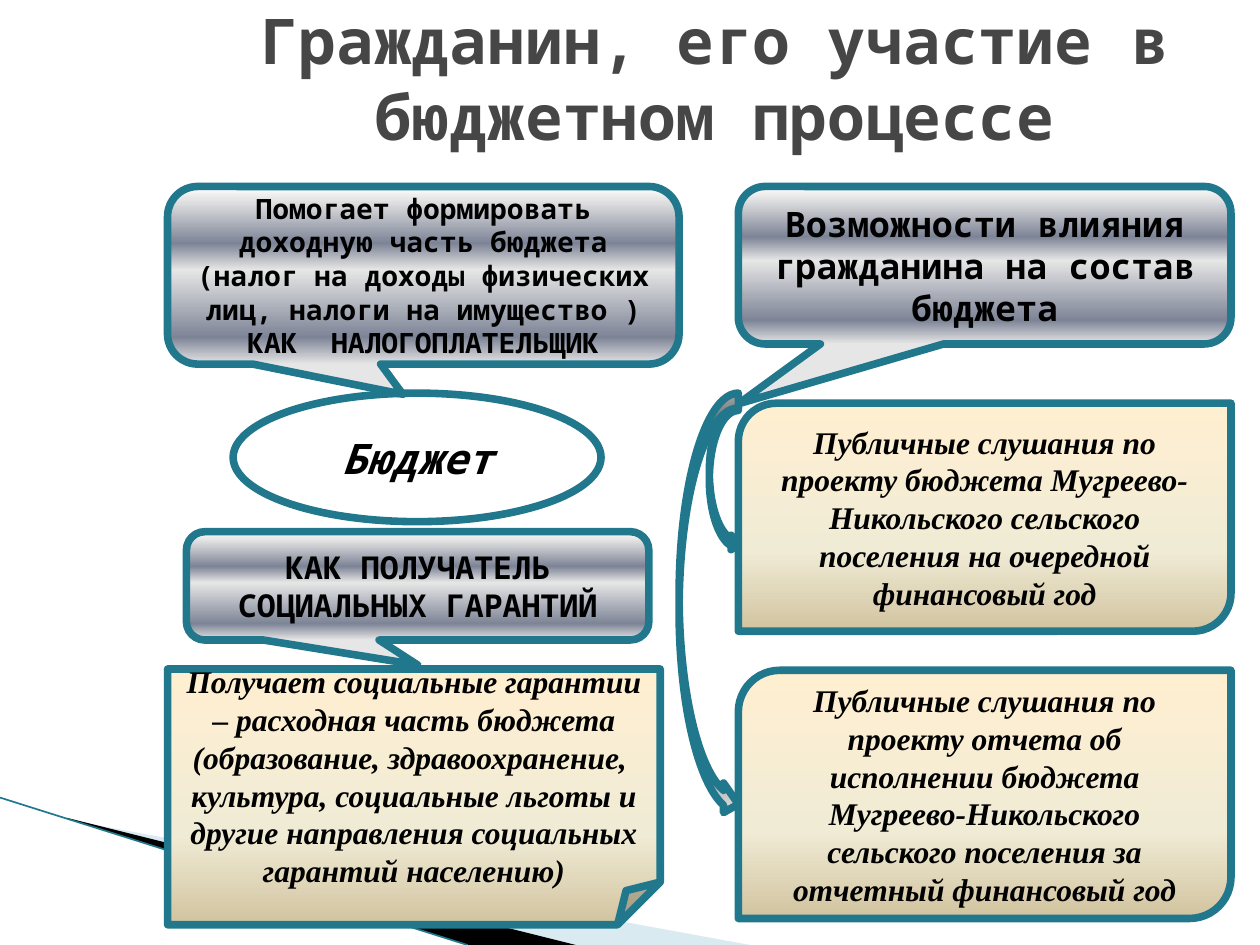
from dataclasses import dataclass
from lxml.etree import SubElement
from pptx import Presentation
from pptx.dml.color import RGBColor
from pptx.enum.shapes import MSO_CONNECTOR as Connector, MSO_SHAPE as Preset
from pptx.enum.text import MSO_ANCHOR as Anchor, PP_ALIGN as Align
from pptx.oxml.ns import qn
from pptx.util import Inches, Pt

COLUMNS, ROWS = 100, 75


@dataclass(frozen=True)
class Theme:
    mono: str = "Noto Sans Mono"
    serif: str = "Times New Roman"
    ink: str = "000000"
    title_ink: str = "464646"
    paper: str = "FFFFFF"
    outline: str = "21788D"
    wave: str = "A0CBDC"
    wave_line: str = "97C5D8"
    outline_width: float = 4.33
    title_size: int = 36
    oval_size: int = 24
    heading_size: int = 20
    body_size: int = 18
    small_size: int = 16
    sand: tuple = ((0, "FFEFD1"), (65, "F0EBD5"), (100, "D1C39F"))
    steel: tuple = ((0, "FFFFFF"), (7, "E6E6E6"), (32, "7D8496"),
                    (47, "E6E6E6"), (85, "7D8496"), (100, "E6E6E6"))
    chrome: tuple = ((0, "CBCBCB"), (13, "5F5F5F"), (21, "5F5F5F"), (63, "FFFFFF"),
                     (67, "B2B2B2"), (69, "292929"), (82, "777777"), (100, "EAEAEA"))


def write_text(shape, text, font, size, color, italic=False):
    frame = shape.text_frame
    frame.word_wrap = True
    frame.vertical_anchor = Anchor.MIDDLE
    frame.text = text
    for paragraph in frame.paragraphs:
        paragraph.alignment = Align.CENTER
        paragraph.font.name = font
        paragraph.font.size = Pt(size)
        paragraph.font.bold = True
        paragraph.font.italic = italic
        paragraph.font.color.rgb = RGBColor.from_string(color)


class SlideBuilder:
    def __init__(self, presentation, theme):
        self.theme = theme
        self.cell_width = presentation.slide_width / COLUMNS
        self.cell_height = presentation.slide_height / ROWS
        self.slide = presentation.slides.add_slide(presentation.slide_layouts[6])
        self.shapes = self.slide.shapes

    def point(self, column, row):
        return round(column * self.cell_width), round(row * self.cell_height)

    def box(self, column, row, columns, rows):
        return *self.point(column, row), *self.point(columns, rows)

    def paint(self, shape, fill):
        if isinstance(fill, str):
            shape.fill.solid()
            shape.fill.fore_color.rgb = RGBColor.from_string(fill)
            return
        shape.fill.gradient()
        shape.fill.gradient_angle = 270
        stops = shape._element.spPr.find(qn("a:gradFill")).find(qn("a:gsLst"))
        stops.clear()
        for position, color in fill:
            stop = SubElement(stops, qn("a:gs"), pos=str(position * 1000))
            SubElement(stop, qn("a:srgbClr"), val=color)

    def title(self, text, box):
        shape = self.shapes.add_textbox(*self.box(*box))
        write_text(shape, text, self.theme.mono, self.theme.title_size, self.theme.title_ink)

    def figure(self, preset, box, fill, adjustments=()):
        shape = self.shapes.add_shape(preset, *self.box(*box))
        shape.shadow.inherit = False
        self.paint(shape, fill)
        shape.line.color.rgb = RGBColor.from_string(self.theme.outline)
        shape.line.width = Pt(self.theme.outline_width)
        for index, value in enumerate(adjustments):
            shape.adjustments[index] = value
        return shape

    def callout(self, text, box, size, tip):
        shape = self.figure(Preset.ROUNDED_RECTANGULAR_CALLOUT, box,
                            self.theme.steel, (*tip, 0.17))
        write_text(shape, text, self.theme.mono, size, self.theme.ink)

    def card(self, text, box, preset):
        shape = self.figure(preset, box, self.theme.sand)
        write_text(shape, text, self.theme.serif, self.theme.body_size,
                   self.theme.ink, italic=True)

    def oval(self, text, box):
        shape = self.figure(Preset.OVAL, box, self.theme.paper)
        write_text(shape, text, self.theme.mono, self.theme.oval_size,
                   self.theme.ink, italic=True)

    def curved_arrow(self, box, fill):
        self.figure(Preset.CURVED_RIGHT_ARROW, box, fill)

    def wedge(self, corners, color, opacity=100):
        points = [self.point(*corner) for corner in corners]
        builder = self.shapes.build_freeform(*points[0])
        builder.add_line_segments(points[1:], close=True)
        shape = builder.convert_to_shape()
        shape.shadow.inherit = False
        self.paint(shape, color)
        shape.line.fill.background()
        if opacity < 100:
            tint = shape._element.spPr.find(qn("a:solidFill"))[0]
            SubElement(tint, qn("a:alpha"), val=str(opacity * 1000))

    def line(self, start, end, color, width):
        connector = self.shapes.add_connector(
            Connector.STRAIGHT, *self.point(*start), *self.point(*end))
        connector.line.color.rgb = RGBColor.from_string(color)
        connector.line.width = Pt(width)
        SubElement(connector._element.spPr, qn("a:effectLst"))


def main():
    presentation = Presentation()
    presentation.slide_width, presentation.slide_height = Inches(10), Inches(7.5)
    theme = Theme()
    page = SlideBuilder(presentation, theme)
    left, right, width, top = 13.3, 58.6, 39.1, 14.8

    page.wedge([(5.5, 65.1), (59.5, 75), (45.6, 75), (5.5, 65)], theme.wave, opacity=40)
    page.wedge([(5.3, 64.9), (45.7, 75), (37.2, 75), (5.4, 65)], theme.ink)
    page.line((0, 63.3), (37.1, 75), theme.outline, 0.95)

    page.card("Публичные слушания по проекту бюджета Мугреево-Никольского сельского "
              "поселения на очередной финансовый год",
              (right, 32, width, 18.1), Preset.ROUND_2_DIAG_RECTANGLE)
    page.card("Публичные слушания по проекту отчета об исполнении бюджета "
              "Мугреево-Никольского сельского поселения за отчетный финансовый год",
              (right, 53.2, width, 19.7), Preset.ROUND_2_DIAG_RECTANGLE)
    page.title("Гражданин, его участие в бюджетном процессе", (15.7, 0, 82, 12.3))
    page.callout("Возможности влияния гражданина на состав бюджета",
                 (right, top, width, 12.5), theme.heading_size, (-0.5, 0.88))
    page.curved_arrow((right - 2.3, 32, 2.3, 11.8), theme.steel)
    page.curved_arrow((right - 4.7, 31.2, 4.7, 33.8), theme.chrome)

    page.oval("Бюджет", (18.5, 31.2, 29.2, 10.2))
    page.card("Получает социальные гарантии – расходная часть бюджета "
              "(образование, здравоохранение, \n"
              "культура, социальные льготы и другие направления социальных "
              "гарантий населению)",
              (left, 53.1, width, 20.3), Preset.FOLDED_CORNER)
    page.callout("КАК ПОЛУЧАТЕЛЬ СОЦИАЛЬНЫХ ГАРАНТИЙ",
                 (14.8, 42.2, 36.7, 8.6), theme.body_size, (0, 0.73))
    page.callout("Помогает формировать доходную часть бюджета (налог на доходы "
                 "физических лиц, налоги на имущество )\nКАК  НАЛОГОПЛАТЕЛЬЩИК",
                 (left, top, 40.6, 14.1), theme.small_size, (-0.04, 0.67))
    presentation.save("out.pptx")


if __name__ == "__main__":
    main()
